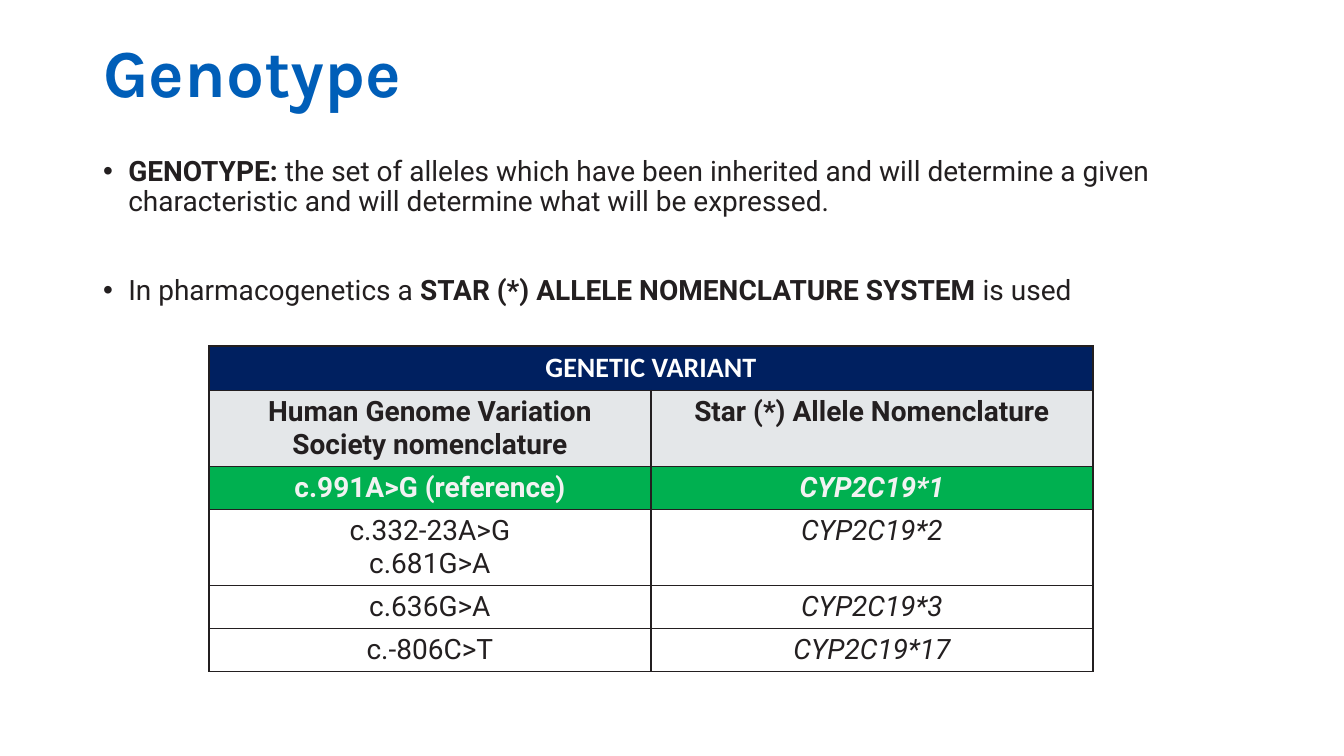
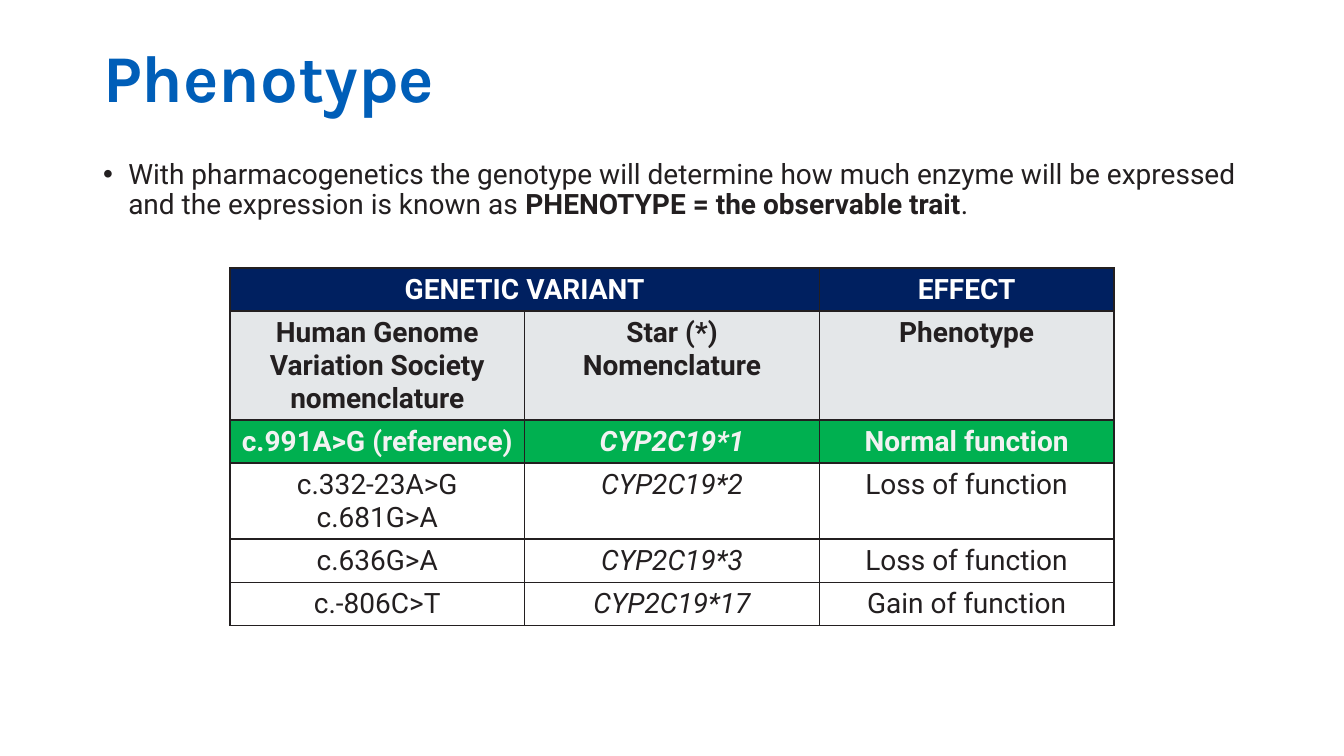
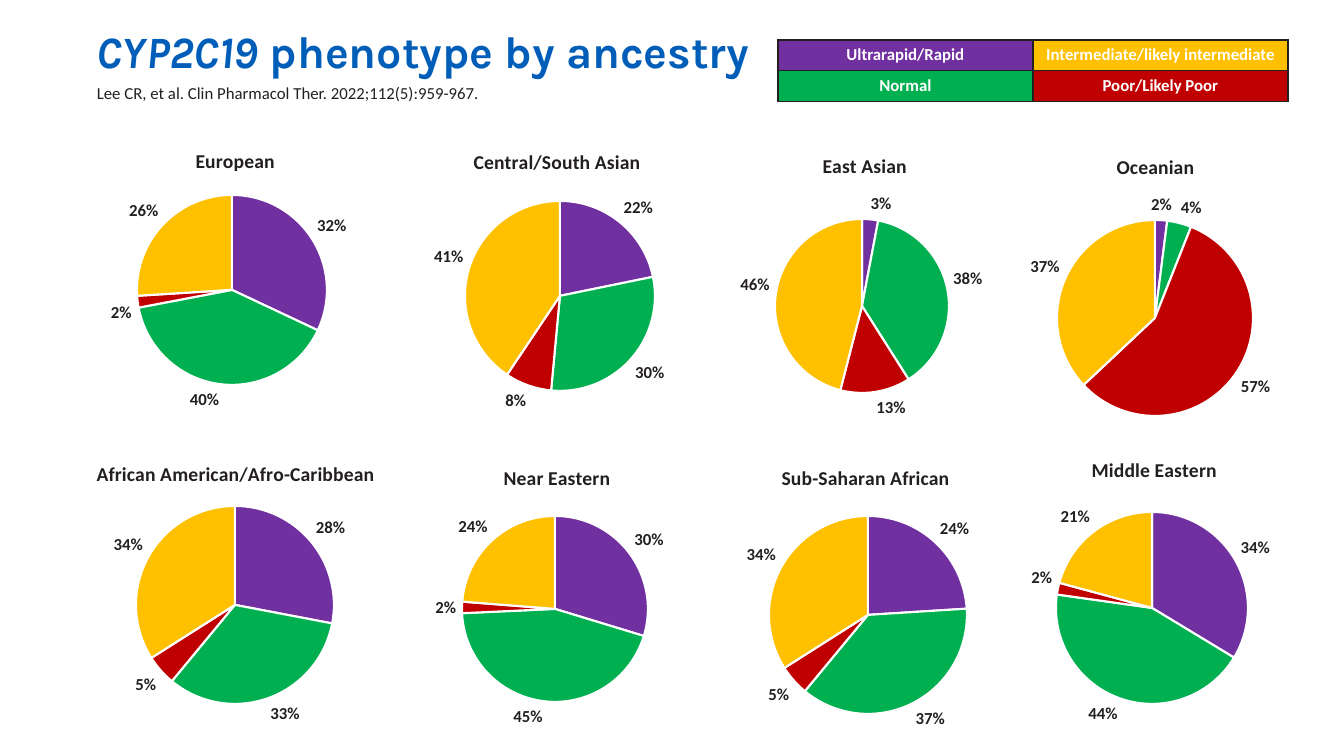
from pptx import Presentation, util as u
from pptx.chart.data import CategoryChartData
from pptx.dml.color import RGBColor
from pptx.enum import chart as ch, text
from pptx.oxml import parse_xml
from pptx.oxml.ns import nsdecls, qn

PX = 914400 / 100.8
HUE = dict(title="005EB8", ink="231F20", white="FFFFFF", pale="F2F2F2",
           navy="002060", grey="E4E7E9", purple="7030A0", green="00B050",
           red="C00000", gold="FFC000")
HEAD, BODY, SMALL = "Karla", "Roboto", "Calibri"

# Runs are (text, emphasis), with b for bold and i for italic
GENO = dict(
    title="Genotype", size=48, top=35,
    body=[[("GENOTYPE: ", "b"),
           ("the set of alleles which have been inherited and will determine "
            "a given characteristic and will determine what will be "
            "expressed.", "")],
          [("In pharmacogenetics a ", ""),
           ("STAR (*) ALLELE NOMENCLATURE SYSTEM ", "b"), ("is used", "")]],
    box=(93, 152, 1159, 166),
    at=(209, 346), high=[44, 76, 43, 76, 43, 43], font=SMALL,
    rows=[["GENETIC VARIANT", None],
          ["Human Genome Variation Society nomenclature",
           "Star (*) Allele Nomenclature"],
          ["c.991A>G (reference)", "CYP2C19*1"],
          ["c.332-23A>G\nc.681G>A", "CYP2C19*2"],
          ["c.636G>A", "CYP2C19*3"],
          ["c.-806C>T", "CYP2C19*17"]])
PHENO = dict(
    title="Phenotype", size=47.7, top=40,
    body=[[("With pharmacogenetics the genotype will determine how much "
            "enzyme will be expressed and the expression is known as ", ""),
           ("PHENOTYPE = the observable trait", "b"), (".", "")]],
    box=(93, 155, 1159, 95),
    at=(230, 268), high=[43, 109, 43, 76, 43, 43], font=BODY,
    rows=[["GENETIC VARIANT", None, "EFFECT"],
          ["Human Genome Variation Society nomenclature",
           "Star (*) Nomenclature", "Phenotype"],
          ["c.991A>G (reference)", "CYP2C19*1", "Normal function"],
          ["c.332-23A>G\nc.681G>A", "CYP2C19*2", "Loss of function"],
          ["c.636G>A", "CYP2C19*3", "Loss of function"],
          ["c.-806C>T", "CYP2C19*17", "Gain of function"]])
WIDE = 884
# Fill, text colour and emphasis of each table row
LOOK = [("navy", "white", "b"), ("grey", "ink", "b"),
        ("green", "pale", "b")] + [(None, "ink", "")] * 3

SLICES = ["purple", "green", "red", "gold"]
KEYS = [[("Ultrarapid/Rapid", "purple"), ("Normal", "green")],
        [("Intermediate/likely intermediate", "gold"),
         ("Poor/Likely Poor", "red")]]
CITE = "Lee CR, et al. Clin Pharmacol Ther. 2022;112(5):959-967."
# Name, shares, frame corner, title left, pie centre and radius
PIES = [
    ("European", (.32, .40, .02, .26), (-19, 126), 192, (232, 290, 95)),
    ("Central/South Asian", (.22, .30, .08, .41), (302, 127), 470,
     (560, 296, 95)),
    ("East Asian", (.03, .38, .13, .46), (610, 131), 819, (862, 306, 87)),
    ("Oceanian", (.02, .04, .57, .37), (900, 132), 1113, (1155, 318, 98)),
    ("African American/Afro-Caribbean", (.28, .33, .05, .34), (-20, 439), 93,
     (235, 605, 99)),
    ("Near Eastern", (.30, .45, .02, .24), (302, 443), 500, (555, 609, 93)),
    ("Sub-Saharan African", (.24, .37, .05, .34), (610, 443), 778,
     (868, 615, 99)),
    ("Middle Eastern", (.34, .44, .02, .21), (900, 435), 1088,
     (1152, 608, 96)),
]
PIE_W, PIE_H, DROP = 504, 301, 18


def emu(*vals):
    return [u.Emu(round(v * PX)) for v in vals]


def rgb(name):
    return RGBColor.from_string(HUE[name])


def style(font, face, size, hue, mark=""):
    font.name, font.size = face, u.Pt(size)
    font.color.rgb = rgb(hue)
    font.bold, font.italic = "b" in mark, "i" in mark


def place(shape, box):
    shape.left, shape.top, shape.width, shape.height = emu(*box)


def write(para, runs, face, size, hue):
    para.line_spacing, para.space_before = 0.9, u.Pt(0)
    para.alignment = text.PP_ALIGN.LEFT
    for words, mark in runs:
        run = para.add_run()
        run.text = words
        style(run.font, face, size, hue, mark)


def start(deck, layout, runs, size, box):
    """Add a slide and its title."""
    slide = deck.slides.add_slide(deck.slide_layouts[layout])
    head = slide.shapes.title
    place(head, box)
    frame = head.text_frame
    frame.auto_size = text.MSO_AUTO_SIZE.NONE
    frame.vertical_anchor = text.MSO_ANCHOR.MIDDLE
    write(frame.paragraphs[0], runs, HEAD, size, "title")
    return slide


def grid(slide, at, cols, high):
    """Add a plain table with equal columns."""
    wide = sum(cols)
    table = slide.shapes.add_table(
        len(high), len(cols), *emu(*at, wide, sum(high))).table
    table.first_row = table.horz_banding = False
    for col, width in zip(table.columns, cols):
        col.width = emu(width)[0]
    for row, tall in zip(table.rows, high):
        row.height = emu(tall)[0]
    return table


def fill(cell, words, face, size, hue, mark, back):
    props = cell._tc.get_or_add_tcPr()
    for side in "LRTB":
        props.append(parse_xml(
            f'<a:ln{side} {nsdecls("a")} w="12700"><a:solidFill>'
            f'<a:srgbClr val="{HUE["ink"]}"/></a:solidFill></a:ln{side}>'))
    if back:
        cell.fill.solid()
        cell.fill.fore_color.rgb = rgb(back)
    else:
        cell.fill.background()
    if words:
        cell.text_frame.text = words
    for para in cell.text_frame.paragraphs:
        para.alignment = text.PP_ALIGN.CENTER
        for run in para.runs:
            style(run.font, face, size, hue, mark)


def variant(deck, info):
    """Build a slide with bullets above a table of variants."""
    slide = start(deck, 1, [(info["title"], "b")], info["size"],
                  (93, info["top"], 1159, 81))
    body = slide.placeholders[1]
    place(body, info["box"])
    frame = body.text_frame
    frame.auto_size = text.MSO_AUTO_SIZE.NONE
    for n, runs in enumerate(info["body"]):
        para = frame.add_paragraph() if n else frame.paragraphs[0]
        props = para._p.get_or_add_pPr()
        props.set("marL", "228600")
        props.set("indent", "-228600")
        props.append(parse_xml(f'<a:buChar {nsdecls("a")} char="•"/>'))
        write(para, runs, BODY, 20, "ink")
        if n:
            para.space_before = u.Pt(42)
    rows = info["rows"]
    count = len(rows[0])
    table = grid(slide, info["at"], [WIDE / count] * count, info["high"])
    table.cell(0, 0).merge(table.cell(0, 1))
    for r, (row, (back, hue, mark)) in enumerate(zip(rows, LOOK)):
        face = BODY if r else info["font"]
        for c, words in enumerate(row):
            slant = "i" if c == 1 and r > 1 else ""
            fill(table.cell(r, c), words, face, 20, hue, mark + slant, back)


def layout(node, index, inner="", **parts):
    """Fix the place of a chart part, as shares of the frame."""
    old = node.find(qn("c:layout"))
    if old is not None:
        node.remove(old)
    modes = '<c:xMode val="edge"/><c:yMode val="edge"/>'
    vals = "".join(f'<c:{k} val="{v:.4f}"/>' for k, v in parts.items())
    node.insert(index, parse_xml(
        f'<c:layout {nsdecls("c")}><c:manualLayout>{inner}{modes}{vals}'
        '</c:manualLayout></c:layout>'))


def pie(slide, name, shares, corner, left, disc):
    data = CategoryChartData(number_format="0%")
    data.categories = ["1", "2", "3", "4"]
    data.add_series("Series 1", shares)
    chart = slide.shapes.add_chart(
        ch.XL_CHART_TYPE.PIE, *emu(*corner, PIE_W, PIE_H), data).chart
    style(chart.font, SMALL, 10, "ink")
    chart.has_legend = False
    chart.has_title = True
    head = chart.chart_title
    head.text_frame.text = name
    style(head.text_frame.paragraphs[0].runs[0].font, SMALL, 14, "ink", "b")
    x, y = corner
    layout(head._element, 1, x=(left - x) / PIE_W, y=DROP / PIE_H)
    mid, low, rad = disc
    layout(chart._chartSpace.chart.plotArea, 0,
           '<c:layoutTarget val="inner"/>',
           x=(mid - rad - x) / PIE_W, y=(low - rad - y) / PIE_H,
           w=2 * rad / PIE_W, h=2 * rad / PIE_H)
    plot = chart.plots[0]
    plot.vary_by_categories = True
    for n, hue in enumerate(SLICES):
        look = plot.series[0].points[n].format
        look.fill.solid()
        look.fill.fore_color.rgb = rgb(hue)
        look.line.color.rgb = rgb("white")
        look.line.width = u.Pt(1.5)
    plot.has_data_labels = True
    tags = plot.data_labels
    tags.show_value, tags.show_percentage = True, False
    tags.number_format, tags.number_format_is_linked = "0%", False
    tags.position = ch.XL_LABEL_POSITION.OUTSIDE_END
    style(tags.font, SMALL, 12, "ink", "b")


def ancestry(deck):
    slide = start(deck, 5, [("CYP2C19", "bi"),
                            (" phenotype by ancestry", "b")], 32,
                  (86, 31, 691, 45))
    for item in PIES:
        pie(slide, *item)
    for n, keys in enumerate(KEYS):
        table = grid(slide, (778 + 255 * n, 40), [255], [30, 30])
        for r, (words, hue) in enumerate(keys):
            fill(table.cell(r, 0), words, SMALL, 12, "white", "b", hue)
    note = slide.shapes.add_textbox(*emu(87, 78, 442, 30)).text_frame
    note.word_wrap = True
    note.text = CITE
    style(note.paragraphs[0].runs[0].font, SMALL, 12, "ink")


def main():
    deck = Presentation()
    deck.slide_width, deck.slide_height = emu(1344, 756)
    variant(deck, GENO)
    variant(deck, PHENO)
    ancestry(deck)
    deck.save("out.pptx")


if __name__ == "__main__":
    main()
